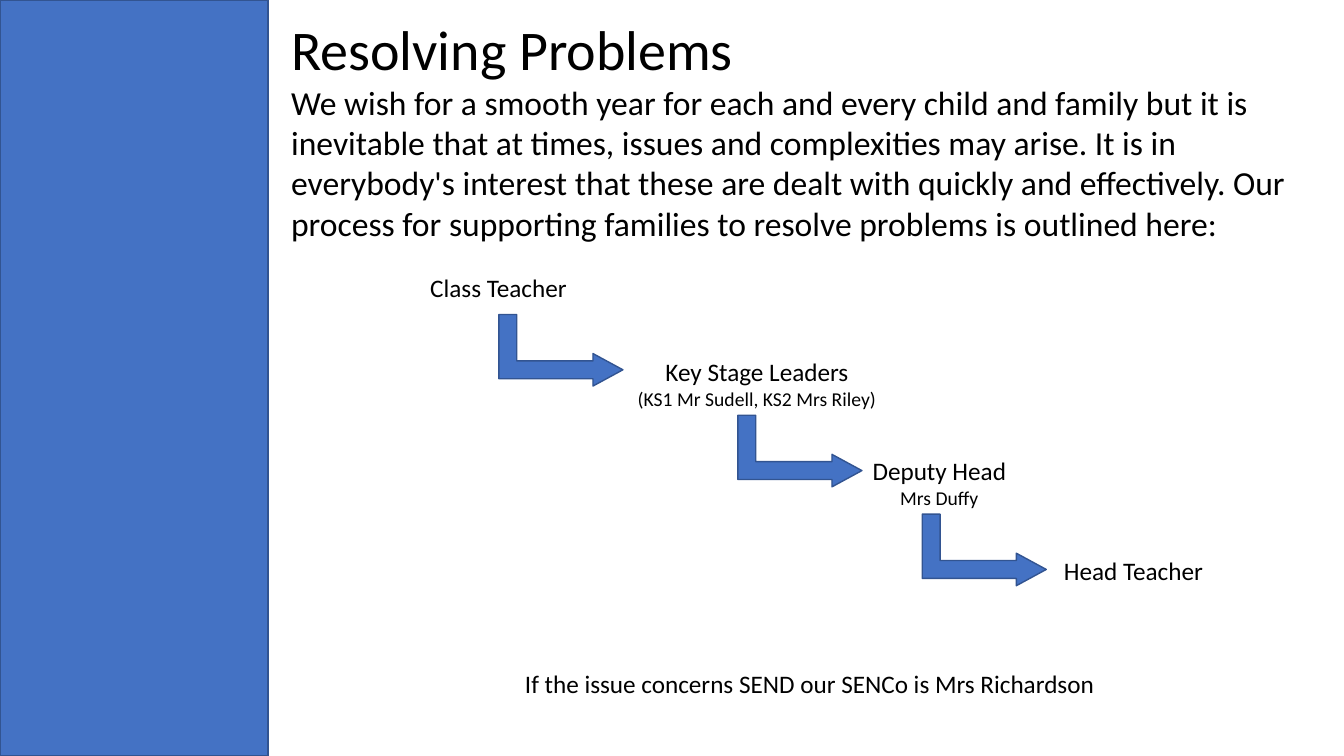
from pptx import Presentation
from pptx.dml.color import RGBColor
from pptx.enum import shapes, text
from pptx.util import Pt

FONT, BLACK, BLUE, NAVY = "Calibri", "000000", "4472C4", "325491"
LEFT, CENTER = text.PP_ALIGN.LEFT, text.PP_ALIGN.CENTER

TITLE = ("Resolving Problems", 40)
TITLE_BOX = (200.9, 6.5, 333.4, 55.4)
PANEL_BOX = (0, 0, 191.5, 540)
INTRO = (
    "We wish for a smooth year for each and every child and family but it is "
    "inevitable that at times, issues and complexities may arise. It is in "
    "everybody's interest that these are dealt with quickly and effectively. "
    "Our process for supporting families to resolve problems is outlined here:"
)
NOTE = "If the issue concerns SEND our SENCo is Mrs Richardson"
TEXTS = [
    ((200.9, 54.7, 732.2, 123.8), LEFT, [(INTRO, 24)]),
    ((294.5, 190.8, 123.1, 28.8), CENTER, [("Class Teacher", 18)]),
    ((435.6, 251.3, 210.2, 46.1), CENTER,
     [("Key Stage Leaders", 18), ("(KS1 Mr Sudell, KS2 Mrs Riley)", 14)]),
    ((595.4, 321.8, 151.2, 46.1), CENTER, [("Deputy Head", 18), ("Mrs Duffy", 14)]),
    ((725, 393.1, 169.2, 28.8), CENTER, [("Head Teacher", 18)]),
    ((367.9, 473.8, 426.2, 28.8), LEFT, [(NOTE, 18)]),
]
ARROW_SIZE = (51.1, 88.6)
ARROW_ADJUSTMENTS = (0.25, 0.227, 0.419)
ARROW_CORNERS = [(375.1, 205.9), (545.8, 277.9), (677.5, 348.5)]


def color(value):
    return RGBColor.from_string(value)


def fill_text(tf, lines, align):
    tf.word_wrap = True
    tf.vertical_anchor = text.MSO_ANCHOR.TOP
    for i, (words, size) in enumerate(lines):
        p = tf.add_paragraph() if i else tf.paragraphs[0]
        p.alignment = align
        p.line_spacing = 1
        r = p.add_run()
        r.text = words
        r.font.name = FONT
        r.font.size = Pt(size)
        r.font.color.rgb = color(BLACK)


def add_blue_shape(s, kind, box):
    sp = s.shapes.add_shape(kind, *map(Pt, box))
    sp.shadow.inherit = False
    sp.fill.solid()
    sp.fill.fore_color.rgb = color(BLUE)
    sp.line.color.rgb = color(NAVY)
    sp.line.width = Pt(1)
    return sp


def main():
    prs = Presentation()
    prs.slide_width, prs.slide_height = Pt(960), Pt(540)
    s = prs.slides.add_slide(prs.slide_layouts[5])

    title = s.shapes.title
    title.left, title.top, title.width, title.height = map(Pt, TITLE_BOX)
    title.text_frame.auto_size = text.MSO_AUTO_SIZE.NONE
    fill_text(title.text_frame, [TITLE], LEFT)

    add_blue_shape(s, shapes.MSO_SHAPE.RECTANGLE, PANEL_BOX)
    for box, align, lines in TEXTS:
        fill_text(s.shapes.add_textbox(*map(Pt, box)).text_frame, lines, align)

    for corner in ARROW_CORNERS:
        arrow = add_blue_shape(s, shapes.MSO_SHAPE.BENT_UP_ARROW, corner + ARROW_SIZE)
        arrow.rotation = 90
        for i, value in enumerate(ARROW_ADJUSTMENTS):
            arrow.adjustments[i] = value

    prs.save("out.pptx")


if __name__ == "__main__":
    main()
